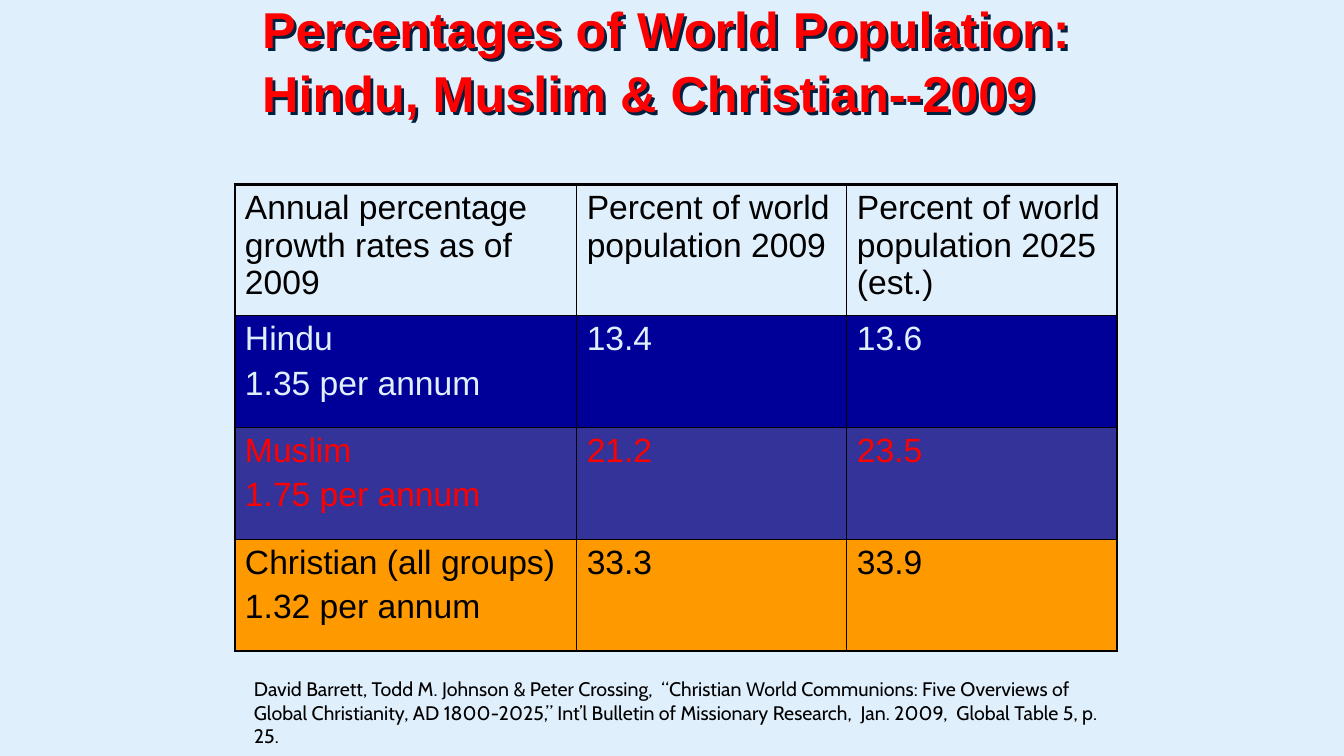
from dataclasses import dataclass

from lxml.etree import SubElement
from pptx import Presentation
from pptx.dml.color import RGBColor as RGB
from pptx.enum.text import MSO_ANCHOR as ANCHOR, PP_ALIGN as ALIGN
from pptx.oxml.ns import qn
from pptx.util import Inches, Pt


@dataclass(frozen=True)
class Theme:
    sky: str = "E0EFFC"
    red: str = "FF0000"
    black: str = "000000"
    navy: str = "000099"
    indigo: str = "333399"
    orange: str = "FF9900"
    shadow: str = "002040"
    font: str = "Arial"
    note_font: str = "Cabin"
    title_size: int = 36
    table_size: int = 24
    note_size: int = 14
    thick: float = 2.25
    thin: float = 1


T = Theme()

TITLE = "Percentages of World Population: Hindu, Muslim & Christian--2009"
COL_WIDTHS = (3.39, 2.68, 2.68)
ROW_HEIGHTS = (1.3, 1.11, 1.11, 1.11)
ROWS = (
    (None, T.black, ("Annual percentage growth rates as of 2009",
                     "Percent of world population 2009",
                     "Percent of world population 2025 (est.)")),
    (T.navy, T.sky, ("Hindu\n1.35 per annum", "13.4", "13.6")),
    (T.indigo, T.red, ("Muslim\n1.75 per annum", "21.2", "23.5")),
    (T.orange, T.black, ("Christian (all groups)\n1.32 per annum", "33.3", "33.9")),
)
SOURCE = ("David Barrett, Todd M. Johnson & Peter Crossing,  “Christian World "
          "Communions: Five Overviews of Global Christianity, AD 1800-2025,” "
          "Int’l Bulletin of Missionary Research,  Jan. 2009,  Global Table 5, p. 25.")


def write(tf, text, size, color, font=T.font, bold=False, spacing=None, gap=0):
    tf.word_wrap = True
    for i, line in enumerate(text.split("\n")):
        p = tf.paragraphs[0] if i == 0 else tf.add_paragraph()
        p.alignment = ALIGN.LEFT
        p.line_spacing = spacing
        if i:
            p.space_before = Pt(gap)
        r = p.add_run()
        r.text = line
        r.font.size = Pt(size)
        r.font.name = font
        r.font.bold = bold
        r.font.color.rgb = RGB.from_string(color)


def place(sp, box):
    sp.left, sp.top, sp.width, sp.height = (Inches(v) for v in box)


def add_shadow(sp, color, distance):
    effects = SubElement(sp.element.spPr, qn("a:effectLst"))
    shadow = SubElement(effects, qn("a:outerShdw"), dist=str(Pt(distance)),
                        dir="2700000", algn="ctr", rotWithShape="0")
    SubElement(shadow, qn("a:srgbClr"), val=color)


def add_title(slide, box):
    sp = slide.shapes.title
    place(sp, box)
    sp.fill.background()
    sp.line.fill.background()
    add_shadow(sp, T.shadow, 2.83)
    sp.text_frame.vertical_anchor = ANCHOR.MIDDLE
    write(sp.text_frame, TITLE, T.title_size, T.red, bold=True, spacing=1.05)


def set_borders(cell, widths):
    tcPr = cell._tc.get_or_add_tcPr()
    for i, (side, width) in enumerate(widths.items()):
        ln = tcPr.makeelement(qn(f"a:ln{side}"), {"w": str(Pt(width))})
        fill = SubElement(ln, qn("a:solidFill"))
        SubElement(fill, qn("a:srgbClr"), val=T.black)
        tcPr.insert(i, ln)


def add_population_table(slide, box):
    last_row, last_col = len(ROWS) - 1, len(COL_WIDTHS) - 1
    table = slide.shapes.add_table(len(ROWS), len(COL_WIDTHS),
                                   *(Inches(v) for v in box)).table
    table.first_row = table.horz_banding = False
    for column, width in zip(table.columns, COL_WIDTHS):
        column.width = Inches(width)
    for row, height in zip(table.rows, ROW_HEIGHTS):
        row.height = Inches(height)
    for i, (fill, color, texts) in enumerate(ROWS):
        for j, text in enumerate(texts):
            cell = table.cell(i, j)
            if fill:
                cell.fill.solid()
                cell.fill.fore_color.rgb = RGB.from_string(fill)
            else:
                cell.fill.background()
            outer = {"L": j == 0, "R": j == last_col, "T": i == 0, "B": i == last_row}
            set_borders(cell, {side: T.thick if edge else T.thin
                               for side, edge in outer.items()})
            write(cell.text_frame, text, T.table_size, color, gap=4.8)


def add_source(slide, box):
    sp = slide.shapes.add_textbox(*(Inches(v) for v in box))
    write(sp.text_frame, SOURCE, T.note_size, T.black, font=T.note_font)


def main():
    prs = Presentation()
    prs.slide_width, prs.slide_height = Inches(13.33), Inches(7.5)
    slide = prs.slides.add_slide(prs.slide_layouts[5])
    slide.background.fill.solid()
    slide.background.fill.fore_color.rgb = RGB.from_string(T.sky)
    add_title(slide, (2.5, 0, 8.83, 1.17))
    add_population_table(slide, (2.33, 1.83, sum(COL_WIDTHS), sum(ROW_HEIGHTS)))
    add_source(slide, (2.42, 6.67, 8.75, 0.57))
    prs.save("out.pptx")


if __name__ == "__main__":
    main()
